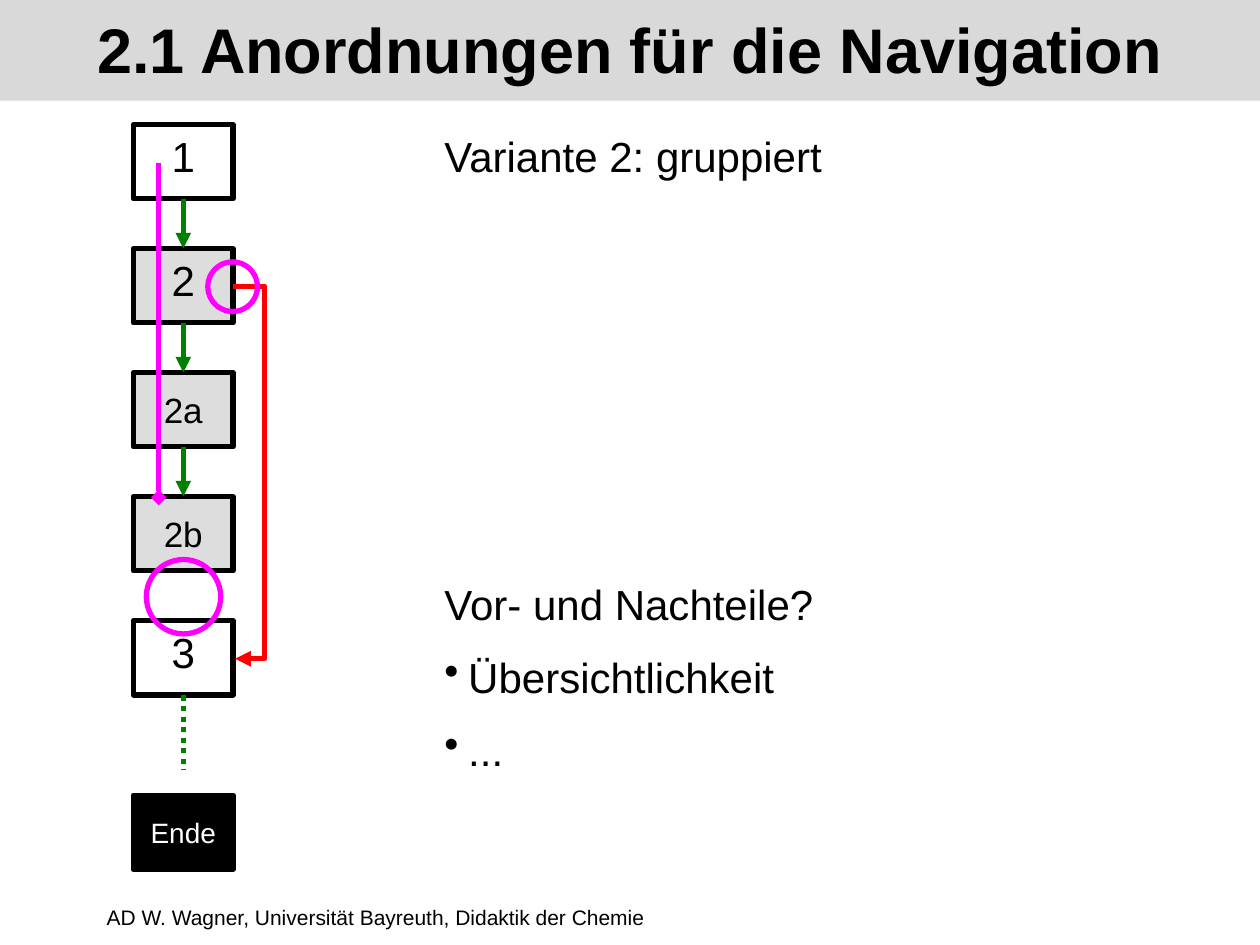
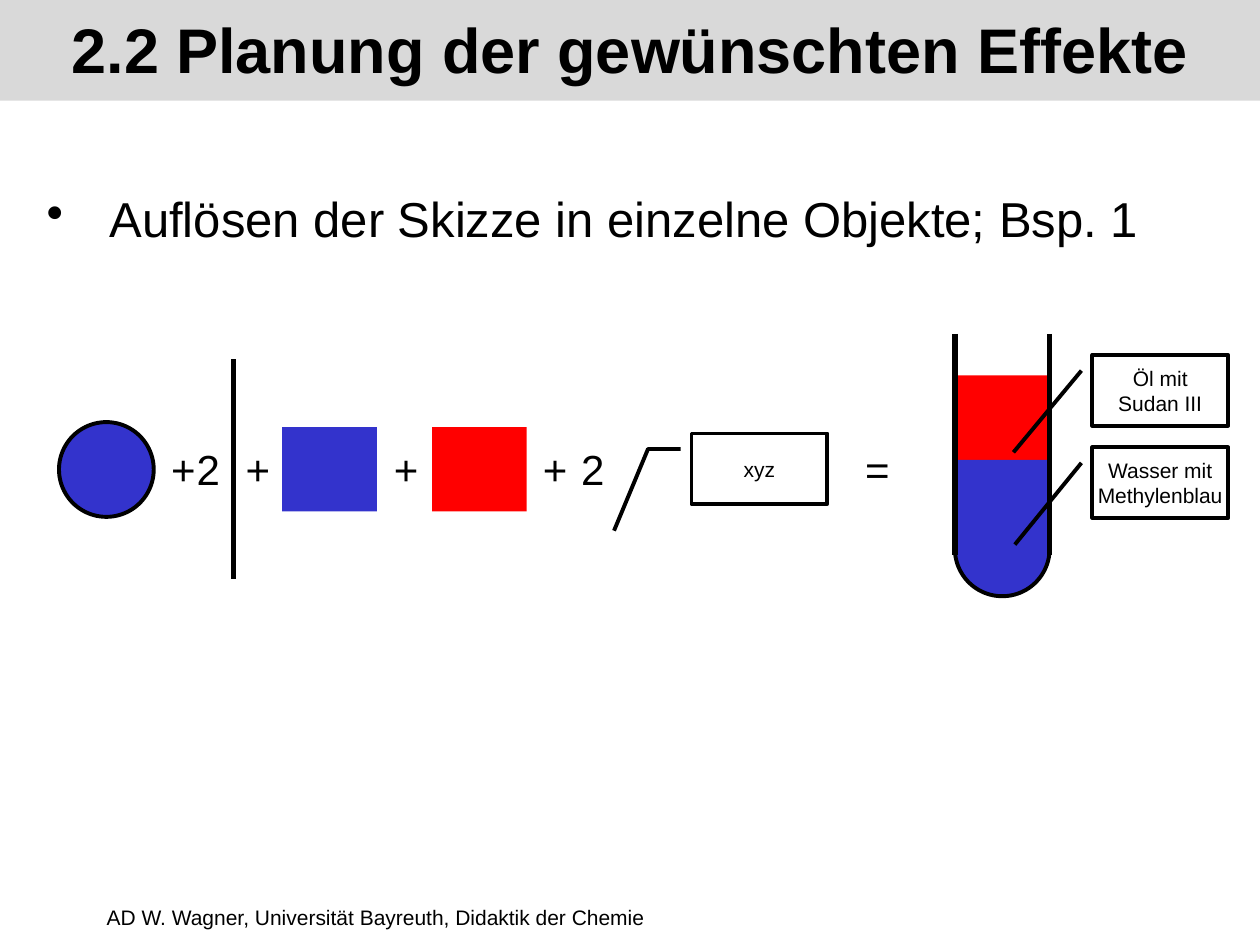
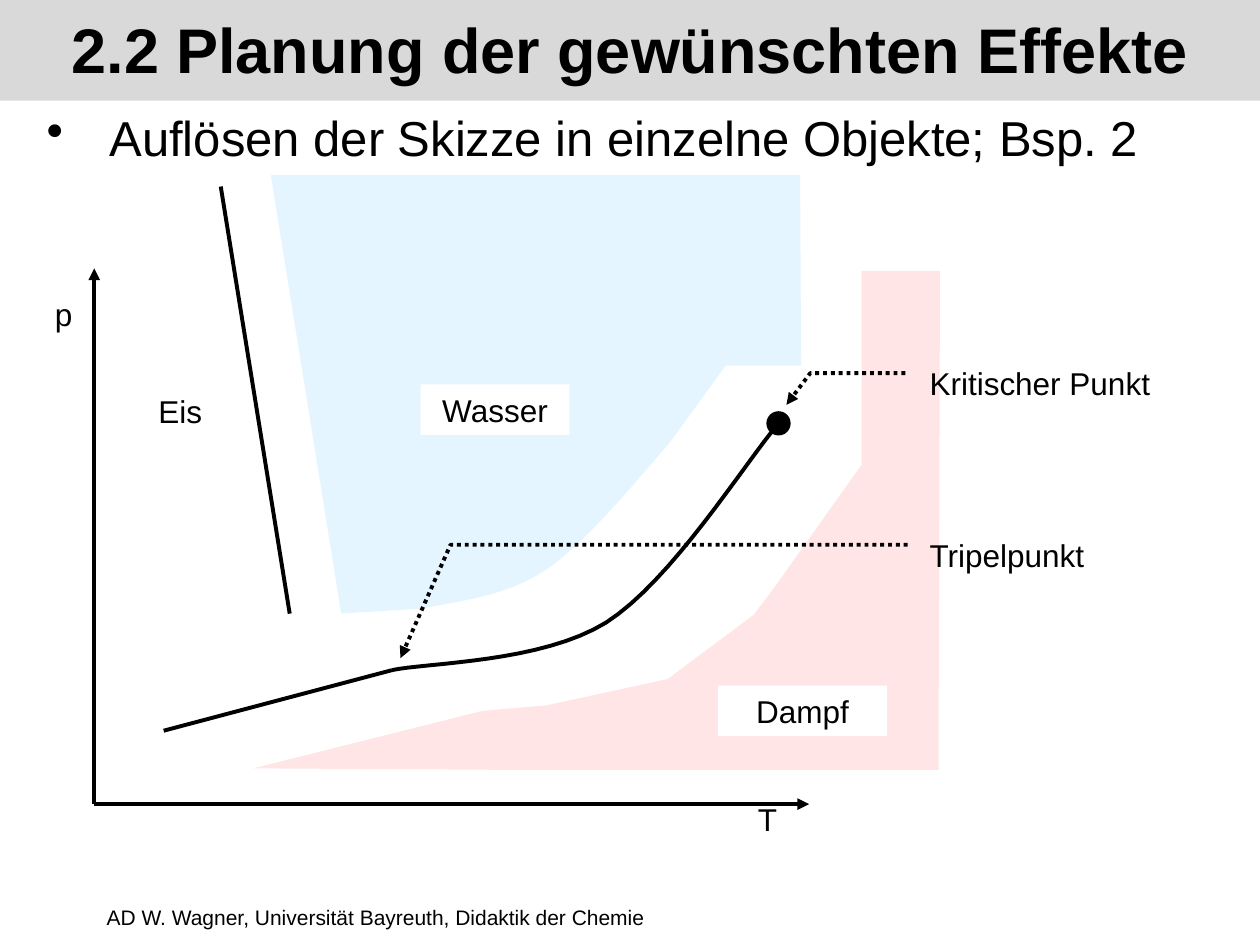
from lxml.etree import SubElement
from pptx import Presentation
from pptx.dml.color import RGBColor
from pptx.enum.dml import MSO_LINE
from pptx.enum.shapes import MSO_CONNECTOR, MSO_SHAPE
from pptx.enum.text import MSO_ANCHOR, PP_ALIGN
from pptx.oxml.ns import qn
from pptx.util import Cm, Pt

COLOURS = {
    "black": "000000", "white": "FFFFFF", "band": "D9D9D9", "group": "DDDDDD",
    "green": "008000", "red": "FF0000", "magenta": "FF00FF", "blue": "3333CC",
    "water": "CCECFF", "vapour": "FFCCCC",
}
RGB = {name: RGBColor.from_string(value) for name, value in COLOURS.items()}
FONT = "Arial"
FOOTER = "AD W. Wagner, Universität Bayreuth, Didaktik der Chemie"
TITLES = [
    "2.1 Anordnungen für die Navigation",
    "2.2 Planung der gewünschten Effekte",
    "2.2 Planung der gewünschten Effekte",
]


def add_box(shapes, kind, place, text="", size=24, fill=None, line=None, weight=3,
            ink="black", align=PP_ALIGN.CENTER, anchor=MSO_ANCHOR.TOP,
            bold=False, indent=0, first_bullet=0, side_inset=0.25):
    place = [Cm(value) for value in place]
    shape = shapes.add_shape(kind, *place) if kind else shapes.add_textbox(*place)
    shape.shadow.inherit = False
    if fill:
        shape.fill.solid()
        shape.fill.fore_color.rgb = RGB[fill]
    else:
        shape.fill.background()
    if line:
        shape.line.color.rgb = RGB[line]
        shape.line.width = Pt(weight)
    else:
        shape.line.fill.background()
    if text:
        frame = shape.text_frame
        frame.word_wrap = True
        frame.vertical_anchor = anchor
        frame.margin_left = frame.margin_right = Cm(side_inset)
        frame.margin_top = frame.margin_bottom = Cm(0.13)
        frame.text = text
        for index, paragraph in enumerate(frame.paragraphs):
            paragraph.alignment = align
            if indent:
                properties = paragraph._p.get_or_add_pPr()
                properties.set("marL", str(Cm(indent)))
                properties.set("indent", str(-Cm(indent)))
                if index:
                    paragraph.space_before = Pt(13)
                if index >= first_bullet:
                    SubElement(properties, qn("a:buChar")).set("char", "•")
            paragraph.font.name = FONT
            paragraph.font.size = Pt(size)
            paragraph.font.bold = bold
            paragraph.font.color.rgb = RGB[ink]
    return shape


def add_line(shapes, start, end, colour="black", weight=3, tail=None,
             kind=MSO_CONNECTOR.STRAIGHT):
    points = [Cm(value) for value in (*start, *end)]
    connector = shapes.add_connector(kind, *points)
    connector.line.color.rgb = RGB[colour]
    connector.line.width = Pt(weight)
    if tail:
        SubElement(connector.line._get_or_add_ln(), qn("a:tailEnd")).set("type", tail)
    SubElement(connector._element.spPr, qn("a:effectLst"))
    return connector


presentation = Presentation()
presentation.slide_width = Cm(25.4)
presentation.slide_height = Cm(19.05)

for title in TITLES:
    slide = presentation.slides.add_slide(presentation.slide_layouts[6])
    add_box(slide.shapes, None, (1.9, 17.86, 21.6, 1.27), FOOTER, 12,
            align=PP_ALIGN.LEFT, anchor=MSO_ANCHOR.MIDDLE)
    add_box(slide.shapes, MSO_SHAPE.RECTANGLE, (0, -0.08, 25.4, 2.11), title, 36,
            fill="band", anchor=MSO_ANCHOR.MIDDLE, bold=True)
navigation, tube_sketch, phase_sketch = [slide.shapes for slide in presentation.slides]

for shapes, top, number in [(tube_sketch, 3.68, 1), (phase_sketch, 2.03, 2)]:
    add_box(shapes, None, (0.69, top, 24, 1.73),
            f"Auflösen der Skizze in einzelne Objekte; Bsp. {number}", 28,
            align=PP_ALIGN.LEFT, indent=1.27)

page_left, page_top, page_width, page_height, page_pitch = 2.69, 2.51, 2.01, 1.5, 2.5
page_middle = page_left + page_width / 2
pages = [
    ("1", 24, None, MSO_ANCHOR.TOP),
    ("2", 24, "group", MSO_ANCHOR.TOP),
    ("2a", 20, "group", MSO_ANCHOR.MIDDLE),
    ("2b", 20, "group", MSO_ANCHOR.MIDDLE),
    ("3", 24, None, MSO_ANCHOR.TOP),
]
for row, (label, size, fill, anchor) in enumerate(pages):
    add_box(navigation, MSO_SHAPE.RECTANGLE,
            (page_left, page_top + row * page_pitch, page_width, page_height),
            label, size, fill, "black", anchor=anchor)
add_box(navigation, MSO_SHAPE.RECTANGLE, (page_left, 16.03, page_width, page_height),
        "Ende", 16, "black", "black", ink="white", anchor=MSO_ANCHOR.MIDDLE)

for row in range(3):
    bottom = page_top + row * page_pitch + page_height
    add_line(navigation, (page_middle, bottom),
             (page_middle, bottom + page_pitch - page_height), "green", tail="triangle")
continuation = add_line(navigation, (page_middle, 14.02), (page_middle, 15.52), "green")
continuation.line.dash_style = MSO_LINE.ROUND_DOT

shortcut = add_line(navigation, (4.7, 5.77), (4.74, 13.28), "red", tail="triangle",
                    kind=MSO_CONNECTOR.ELBOW)
bend = SubElement(shortcut._element.spPr.prstGeom.get_or_add_avLst(), qn("a:gd"))
bend.set("name", "adj1")
bend.set("fmla", "val 1600000")

add_box(navigation, None, (8.71, 2.51, 12, 1.27), "Variante 2: gruppiert",
        align=PP_ALIGN.LEFT)
add_box(navigation, None, (8.71, 11.53, 16, 4.37),
        "Vor- und Nachteile?\nÜbersichtlichkeit\n...",
        align=PP_ALIGN.LEFT, indent=0.48, first_bullet=1)
add_line(navigation, (3.2, 3.28), (3.2, 10.03), "magenta", tail="diamond")
for left, top, diameter in [(2.95, 11.28, 1.5), (4.19, 5.28, 1)]:
    add_box(navigation, MSO_SHAPE.OVAL, (left, top, diameter, diameter), line="magenta")

tube_width, liquid_height = 1.91, 1.7
add_box(tube_sketch, MSO_SHAPE.OVAL, (1.19, 8.51, tube_width, tube_width),
        fill="blue", line="black", weight=2.25)
for left, colour in [(5.69, "blue"), (8.71, "red")]:
    add_box(tube_sketch, MSO_SHAPE.RECTANGLE, (left, 8.61, tube_width, liquid_height),
            fill=colour)
add_line(tube_sketch, (4.7, 7.24), (4.7, 11.68))

tube = tube_sketch.add_group_shape().shapes
tube_left = 19.25
add_box(tube, MSO_SHAPE.RECTANGLE, (tube_left, 7.57, tube_width, liquid_height), fill="red")
add_box(tube, MSO_SHAPE.OVAL, (tube_left, 10.11, tube_width, tube_width),
        fill="blue", line="black", weight=2.25)
add_box(tube, MSO_SHAPE.RECTANGLE, (tube_left, 9.27, tube_width, liquid_height), fill="blue")
for wall in (tube_left, tube_left + tube_width):
    add_line(tube, (wall, 6.73), (wall, 11.18))

tube_labels = [
    (tube, MSO_SHAPE.LINE_CALLOUT_1, 22.02, 7.16, "Öl mit\nSudan III",
     (0.22, -0.08, 1.38, -0.58)),
    (tube, MSO_SHAPE.LINE_CALLOUT_1, 22.02, 9.02, "Wasser mit\nMethylenblau",
     (0.22, -0.08, 1.38, -0.57)),
    (tube_sketch, MSO_SHAPE.LINE_CALLOUT_2, 13.94, 8.74, "xyz",
     (0.22, -0.08, 0.22, -0.32, 1.38, -0.57)),
]
for shapes, kind, left, top, label, pointer in tube_labels:
    callout = add_box(shapes, kind, (left, top, 2.74, 1.42), label, 12, line="black",
                      weight=2.25, anchor=MSO_ANCHOR.MIDDLE, side_inset=0)
    for index, value in enumerate(pointer):
        callout.adjustments[index] = value

signs = [(16.94, "="), (4.45, "+"), (7.44, "+"), (10.44, "+"), (11.2, "2"),
         (2.95, "+"), (3.45, "2")]
for left, sign in signs:
    add_box(tube_sketch, None, (left, 8.81, 1.5, 1.27), sign)

water_outline = [
    [(6.88, 12.37)], [(8.51, 12.27)],
    [(9.2, 12.12), (10.19, 12.04), (11.02, 11.48)],
    [(11.84, 10.92), (12.88, 9.63), (13.49, 8.94)],
    [(14.63, 7.37)], [(16.15, 7.37)], [(16.13, 3.53)], [(5.46, 3.53)],
]
vapour_outline = [
    [(5.11, 15.49)], [(10.19, 15.52)], [(18.92, 15.52)], [(18.95, 5.46)],
    [(17.37, 5.46)], [(17.37, 9.37)], [(15.6, 11.86)], [(15.19, 12.4)],
    [(13.46, 13.69)], [(11.02, 14.22)], [(9.73, 14.33)],
]
boiling_curve = [
    [(7.9, 13.51)],
    [(8.61, 13.36), (10.92, 13.36), (12.22, 12.55)],
    [(13.54, 11.71), (14.99, 9.37), (15.7, 8.53)],
]
curve_steps = 16
for outline, fill in [(water_outline, "water"), (vapour_outline, "vapour"),
                      (boiling_curve, None)]:
    points = []
    for segment in outline:
        if len(segment) == 1:
            points += segment
            continue
        corners = list(zip(points[-1], *segment))
        for step in range(1, curve_steps + 1):
            t = step / curve_steps
            points.append(tuple(
                a * (1 - t) ** 3 + 3 * b * t * (1 - t) ** 2 + 3 * c * t ** 2 * (1 - t) + d * t ** 3
                for a, b, c, d in corners))
    points = [(Cm(x), Cm(y)) for x, y in points]
    builder = phase_sketch.build_freeform(*points[0])
    builder.add_line_segments(points[1:], close=bool(fill))
    shape = builder.convert_to_shape()
    shape.shadow.inherit = False
    if fill:
        shape.fill.solid()
        shape.fill.fore_color.rgb = RGB[fill]
        colour = shape._element.spPr.find(".//" + qn("a:srgbClr"))
        SubElement(colour, qn("a:alpha")).set("val", "50000")
        shape.line.fill.background()
    else:
        shape.fill.background()
        shape.line.color.rgb = RGB["black"]
        shape.line.width = Pt(2.25)

add_line(phase_sketch, (3.3, 14.73), (7.9, 13.51), weight=2.25)
add_line(phase_sketch, (5.84, 12.37), (4.45, 3.76), weight=2.25)
for label, left, top, width in [("Dampf", 14.48, 13.82, 3.4), ("Eis", 2.44, 7.77, 2.39),
                                ("Wasser", 8.48, 7.75, 3)]:
    add_box(phase_sketch, MSO_SHAPE.RECTANGLE, (left, top, width, 1.02), label, 18, "white")

axes = phase_sketch.add_group_shape().shapes
for axis_end in [(1.9, 5.41), (16.31, 16.21)]:
    add_line(axes, (1.9, 16.21), axis_end, weight=2.25, tail="triangle")
for label, left, top in [("T", 14.88, 16), ("p", 0.69, 5.82)]:
    add_box(phase_sketch, None, (left, top, 1.19, 1.02), label, 18)

point_labels = [
    ("Tripelpunkt", 10.67, 4.8, (0.28, -0.04, 0.28, -1.96, 2.32, -2.17)),
    ("Kritischer Punkt", 7.21, 5.99, (0.28, -0.04, 0.28, -0.36, 0.85, -0.44)),
]
for label, top, width, pointer in point_labels:
    callout = add_box(phase_sketch, MSO_SHAPE.LINE_CALLOUT_2_NO_BORDER,
                      (18.49, top, width, 1.12), label, 18, line="black", weight=2.25,
                      align=PP_ALIGN.LEFT)
    callout.line.dash_style = MSO_LINE.ROUND_DOT
    SubElement(callout.line._get_or_add_ln(), qn("a:tailEnd")).set("type", "triangle")
    for index, value in enumerate(pointer):
        callout.adjustments[index] = value
add_box(phase_sketch, MSO_SHAPE.OVAL, (15.49, 8.33, 0.41, 0.41), fill="black",
        line="black", weight=2.25)

presentation.save("out.pptx")
